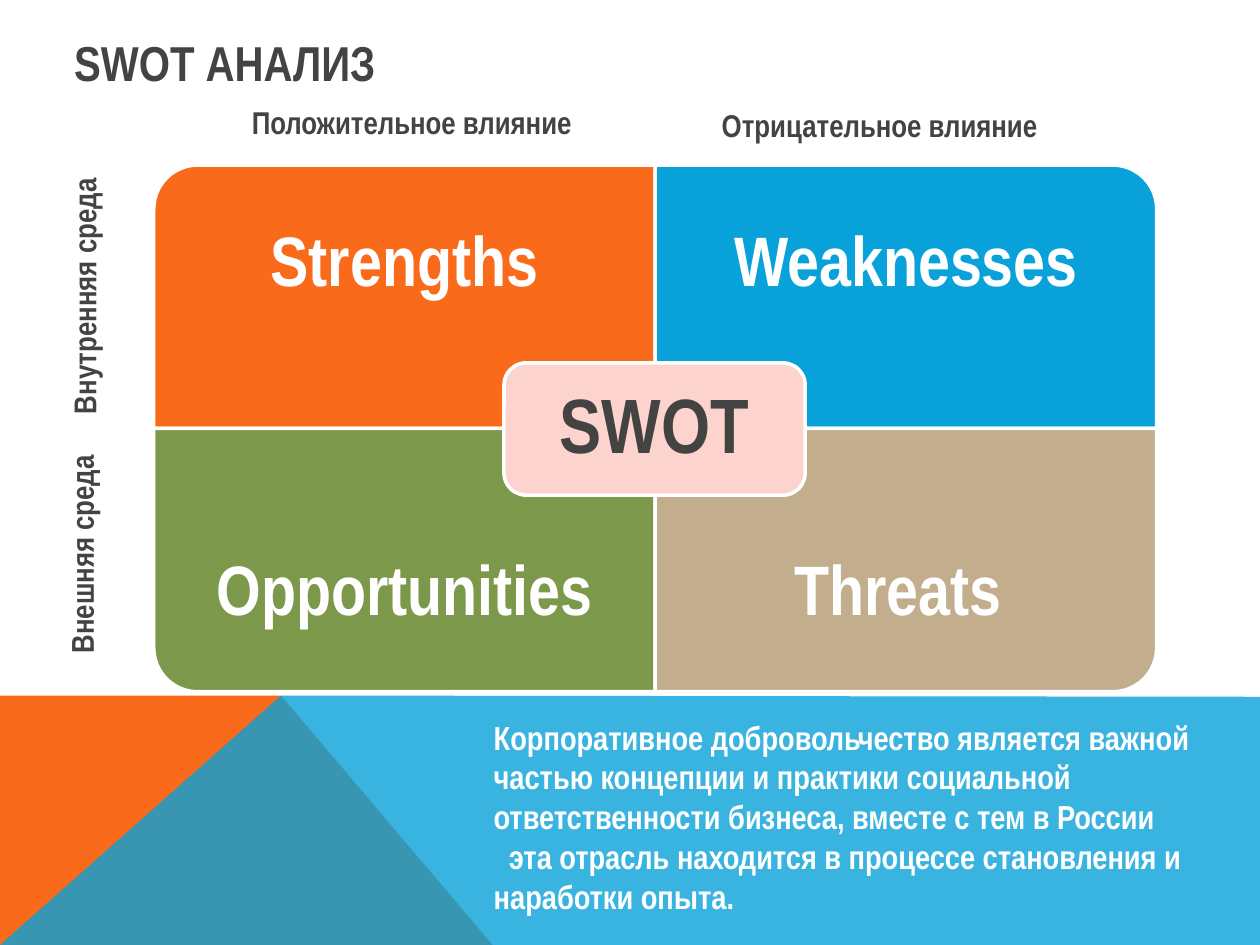
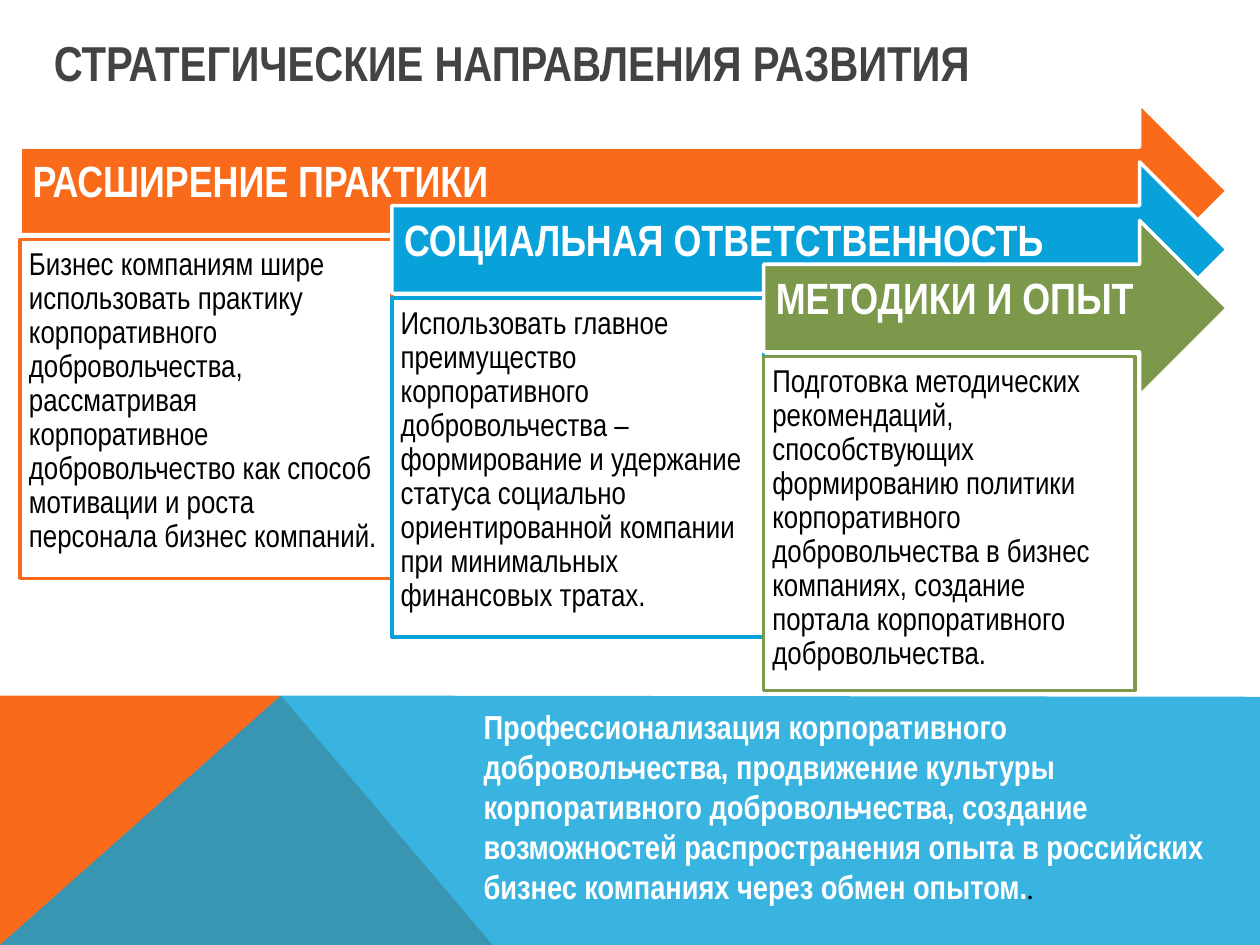
from dataclasses import dataclass

from lxml import etree
from pptx import Presentation
from pptx.dml.color import RGBColor
from pptx.enum import shapes as sh, text as tx
from pptx.oxml.ns import qn
from pptx.util import Inches, Pt


@dataclass(frozen=True)
class Theme:
    font: str = "Arial Narrow"
    alt: str = "Karla"
    dark: str = "434342"
    white: str = "FFFFFF"
    black: str = "000000"
    orange: str = "F96A1B"
    blue: str = "08A1D9"
    green: str = "7C984A"
    tan: str = "C2AD8D"
    pink: str = "FDD4CD"
    title: int = 28
    quad: int = 40
    hub: int = 44
    head: int = 25
    note: int = 19
    body: int = 18
    edge: int = 2


T = Theme()
KIND = sh.MSO_SHAPE
MID = tx.MSO_ANCHOR.MIDDLE
TOP = tx.MSO_ANCHOR.TOP
LEFT = tx.PP_ALIGN.LEFT
MIDDLE = tx.PP_ALIGN.CENTER


def add_run(para, words, size, color, bold=True, font=T.font):
    run = para.add_run()
    run.text = words
    run.font.name = font
    run.font.size = Pt(size)
    run.font.bold = bold
    run.font.color.rgb = RGBColor.from_string(color)


def write(shape, words, size=T.body, color=T.dark, bold=True, align=LEFT,
          anchor=TOP, pads=(0.1, 0.05, 0.1, 0.05), space=None,
          wrap=True, grow=False):
    frame = shape.text_frame
    frame.word_wrap = wrap
    frame.vertical_anchor = anchor
    fit = tx.MSO_AUTO_SIZE
    frame.auto_size = fit.SHAPE_TO_FIT_TEXT if grow else fit.NONE
    (frame.margin_left, frame.margin_top,
     frame.margin_right, frame.margin_bottom) = map(Inches, pads)
    para = frame.paragraphs[0]
    para.alignment = align
    para.line_spacing = space
    add_run(para, words, size, color, bold)
    return frame


def add_box(slide, x, y, w, h, words, turn=0, **style):
    box = slide.shapes.add_textbox(*map(Inches, (x, y, w, h)))
    box.rotation = turn
    return write(box, words, **style)


def add_form(slide, kind, x, y, w, h, fill, line=T.white, turn=0):
    form = slide.shapes.add_shape(kind, *map(Inches, (x, y, w, h)))
    form.rotation = turn
    form.shadow.inherit = False
    form.fill.solid()
    form.fill.fore_color.rgb = RGBColor.from_string(fill)
    form.line.color.rgb = RGBColor.from_string(line)
    form.line.width = Pt(T.edge)
    return form


def add_band(slide, points, fill, alpha=None):
    first, *rest = [(Inches(x), Inches(y)) for x, y in points]
    path = slide.shapes.build_freeform(*first)
    path.add_line_segments(rest, close=True)
    band = path.convert_to_shape()
    band.shadow.inherit = False
    band.line.fill.background()
    band.fill.solid()
    band.fill.fore_color.rgb = RGBColor.from_string(fill)
    if alpha:
        color = band.fill._xPr.find(".//" + qn("a:srgbClr"))
        etree.SubElement(color, qn("a:alpha")).set("val", str(alpha * 1000))


def add_page(deck, title, x, w):
    slide = deck.slides.add_slide(deck.slide_layouts[6])
    add_band(slide, [(0, 7.5), (0, 5.52), (2.23, 5.52), (3.91, 7.5)], T.orange)
    add_band(slide, [(0, 7.5), (2.23, 5.52), (10, 5.53), (10, 7.5)], T.blue, 80)
    add_box(slide, x, 0.21, w, 0.57, title, size=T.title, grow=True)
    return slide


def add_note(slide, x, y, w, words):
    return add_box(slide, x, y, w, 1.7, words,
                   size=T.note, color=T.white, grow=True)


def add_quad(slide, col, row, words, fill, turn):
    w, h = 3.98, 2.09
    x, y = 1.22 + col * w, 1.31 + row * h
    fw, fh = (h, w) if turn % 180 else (w, h)
    add_form(slide, KIND.ROUND_1_RECTANGLE, x + (w - fw) / 2, y + (h - fh) / 2,
             fw, fh, fill, turn=turn)
    add_box(slide, x, y + row * 0.52, w, 1.57, words, size=T.quad,
            color=T.white, align=MIDDLE, anchor=MID, pads=(0.31,) * 4, space=0.9)


def add_step(slide, num, head, body, fill, tall):
    x, y, w = 0.16 + num * 2.95, 0.82 + num * 0.465, 2.95
    arrow = add_form(slide, KIND.RIGHT_ARROW, x, y, 9.74 - x, 1.39, fill)
    write(arrow, head, size=T.head, color=T.white, anchor=MID,
          pads=(0.1, 0.1, 0.28, 0.22), space=0.9)
    card = add_form(slide, KIND.RECTANGLE, x, y + 1.08, w, tall, T.white, fill)
    write(card, body, color=T.black, bold=False, pads=(0.07,) * 4, space=0.9)


def draw_swot(deck):
    slide = add_page(deck, "SWOT АНАЛИЗ", 0.49, 2.85)
    note = add_note(slide, 3.82, 5.64, 6.02,
                    "Корпоративное добровольчество является важной частью "
                    "концепции и практики социальной ответственности бизнеса, "
                    "вместе с тем в России")
    para = note.add_paragraph()
    para._p.get_or_add_pPr().set("indent", str(Inches(0.12)))
    add_run(para, "эта отрасль находится в процессе становления и "
            "наработки опыта.", T.note, T.white)

    for quad in [(0, 0, "Strengths", T.orange, 270),
                 (1, 0, "Weaknesses", T.blue, 0),
                 (0, 1, "Opportunities", T.green, 180),
                 (1, 1, "Threats ", T.tan, 90)]:
        add_quad(slide, *quad)
    hub = add_form(slide, KIND.ROUNDED_RECTANGLE, 4, 2.88, 2.39, 1.05, T.pink)
    write(hub, "SWOT", size=T.hub, align=MIDDLE, anchor=MID,
          pads=(0.18,) * 4, space=0.9)

    for x, y, w, words, turn in [
            (1.9, 0.77, 2.84, "Положительное влияние", 0),
            (5.63, 0.79, 2.74, "Отрицательное влияние", 0),
            (-0.28, 4.16, 1.85, "Внешняя среда", 270),
            (-0.41, 2.11, 2.15, "Внутренняя среда", 270)]:
        add_box(slide, x, y, w, 0.4, words, turn, wrap=False, grow=True)


def draw_plan(deck):
    slide = add_page(deck, "СТРАТЕГИЧЕСКИЕ НАПРАВЛЕНИЯ РАЗВИТИЯ", 0.33, 9.24)
    steps = [
        ("РАСШИРЕНИЕ ПРАКТИКИ",
         "Бизнес компаниям шире использовать практику корпоративного "
         "добровольчества, рассматривая корпоративное добровольчество как "
         "способ мотивации и роста персонала бизнес компаний.",
         T.orange, 2.69),
        ("СОЦИАЛЬНАЯ ОТВЕТСТВЕННОСТЬ",
         "Использовать главное преимущество корпоративного добровольчества – "
         "формирование и удержание статуса социально ориентированной компании "
         "при минимальных финансовых тратах.",
         T.blue, 2.69),
        ("МЕТОДИКИ И ОПЫТ",
         "Подготовка методических рекомендаций, способствующих формированию "
         "политики корпоративного добровольчества в бизнес компаниях, "
         "создание портала корпоративного добровольчества.",
         T.green, 2.65)]
    for num, step in enumerate(steps):
        add_step(slide, num, *step)
    note = add_note(slide, 3.74, 5.56, 6.26,
                    "Профессионализация корпоративного добровольчества, "
                    "продвижение культуры корпоративного добровольчества, "
                    "создание возможностей распространения опыта в российских "
                    "бизнес компаниях через обмен опытом.")
    add_run(note.paragraphs[0], ".", T.body, T.black, False, T.alt)


def main():
    deck = Presentation()
    deck.slide_width, deck.slide_height = Inches(10), Inches(7.5)
    draw_swot(deck)
    draw_plan(deck)
    deck.save("out.pptx")


if __name__ == "__main__":
    main()
